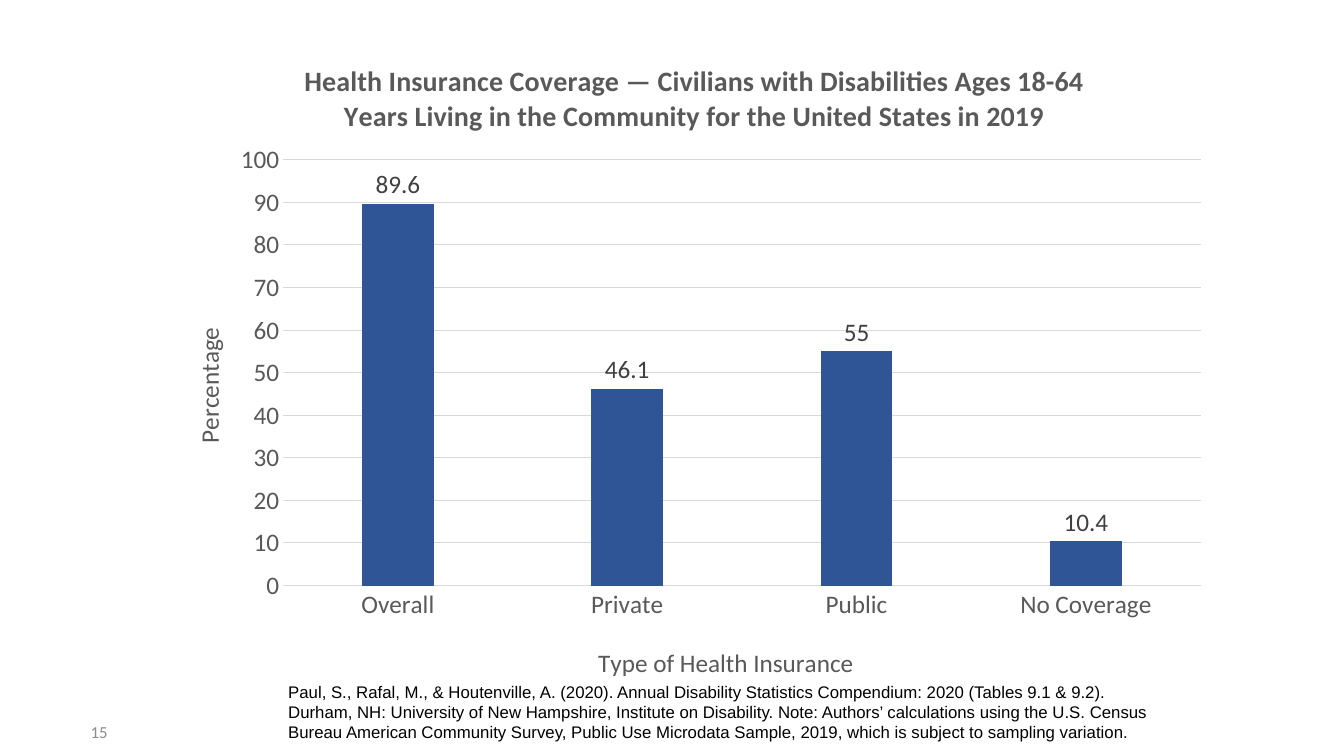
from dataclasses import dataclass
from lxml import etree
from pptx import Presentation
from pptx.chart.data import CategoryChartData
from pptx.dml.color import RGBColor
from pptx.enum.chart import XL_CHART_TYPE, XL_LABEL_POSITION, XL_TICK_MARK
from pptx.enum.text import MSO_ANCHOR
from pptx.util import Inches, Pt

COLUMNS = XL_CHART_TYPE.COLUMN_CLUSTERED
OUTSIDE = XL_LABEL_POSITION.OUTSIDE_END
NO_TICK = XL_TICK_MARK.NONE
TOP, MIDDLE = MSO_ANCHOR.TOP, MSO_ANCHOR.MIDDLE

# Content
TITLE = ("Health Insurance Coverage — Civilians with Disabilities Ages 18-64 "
         "Years Living in the Community for the United States in 2019")
COVERAGE = {"Overall": 89.6, "Private": 46.1, "Public": 55, "No Coverage": 10.4}
X_TITLE = "Type of Health Insurance"
Y_TITLE = "Percentage"
SOURCE = ("Paul, S., Rafal, M., & Houtenville, A. (2020). Annual Disability Statistics "
          "Compendium: 2020 (Tables 9.1 & 9.2). Durham, NH: University of New Hampshire, "
          "Institute on Disability. Note: Authors’ calculations using the U.S. Census "
          "Bureau American Community Survey, Public Use Microdata Sample, 2019, which is "
          "subject to sampling variation.")
PAGE = "15"


@dataclass(frozen=True)
class Theme:
    bar: str = "2F5597"
    grid: str = "D9D9D9"
    text: str = "595959"
    label: str = "404040"
    page: str = "8C8C8C"
    note: str = "000000"
    head: int = 20
    axis: int = 18
    small: int = 12
    font: str = "Calibri"
    serif: str = "Arial"


THEME = Theme()

# Places: slide shares for boxes, chart shares for chart parts
WIDE, HIGH = 13.33, 7.5
CHART_BOX = (0.116, 0.036, 0.794, 0.877)
NOTE_BOX = (0.207, 0.895, 0.661, 0.095)
PAGE_BOX = (0.06, 0.933, 0.056, 0.069)
PLOT = {"x": 0.119, "y": 0.2, "w": 0.86, "h": 0.642}
HEAD_AT = {"x": 0.134, "y": 0.043}
X_AT = {"x": 0.41, "y": 0.925}
Y_AT = {"x": 0.029, "y": 0.446}
C = "http://schemas.openxmlformats.org/drawingml/2006/chart"


def place(box):
    x, y, w, h = box
    return [Inches(round(n, 2)) for n in (x * WIDE, y * HIGH, w * WIDE, h * HIGH)]


def style(font, size, color, name=THEME.font, bold=False):
    font.size, font.name, font.bold = Pt(size), name, bold
    font.color.rgb = RGBColor.from_string(color)


def write(frame, text, **form):
    para = frame.paragraphs[0]
    run = para.add_run()
    run.text = text
    style(run.font, **form)


def add_text(slide, text, box, anchor, **form):
    frame = slide.shapes.add_textbox(*place(box)).text_frame
    frame.word_wrap, frame.vertical_anchor = True, anchor
    write(frame, text, **form)


def lay_out(part, spots, after, inner=False):
    """Give a chart part a fixed place, in shares of the chart."""
    for old in part.findall(f"{{{C}}}layout"):
        part.remove(old)
    layout = etree.Element(f"{{{C}}}layout")
    manual = etree.SubElement(layout, f"{{{C}}}manualLayout")
    if inner:
        etree.SubElement(manual, f"{{{C}}}layoutTarget", val="inner")
    for key in "xy":
        etree.SubElement(manual, f"{{{C}}}{key}Mode", val="edge")
    for key, share in spots.items():
        etree.SubElement(manual, f"{{{C}}}{key}", val=str(share))
    prior = part.find(f"{{{C}}}{after}") if after else None
    part.insert(0 if prior is None else part.index(prior) + 1, layout)


def add_title(owner, text, spots, size, bold=False):
    owner.has_title = True
    title = owner.chart_title if hasattr(owner, "chart_title") else owner.axis_title
    write(title.text_frame, text, size=size, color=THEME.text, bold=bold)
    lay_out(title._element, spots, "tx")
    return title


def set_line(line, color):
    line.color.rgb = RGBColor.from_string(color)
    line.width = Pt(0.75)


def add_columns(slide):
    data = CategoryChartData()
    data.categories = list(COVERAGE)
    data.add_series("Series 1", list(COVERAGE.values()))
    chart = slide.shapes.add_chart(COLUMNS, *place(CHART_BOX), data).chart
    chart.has_legend = False
    style(chart.font, THEME.axis, THEME.text)

    # Titles and axes
    add_title(chart, TITLE, HEAD_AT, THEME.head, bold=True)
    kinds, values = chart.category_axis, chart.value_axis
    for axis in (kinds, values):
        axis.major_tick_mark = axis.minor_tick_mark = NO_TICK
        style(axis.tick_labels.font, THEME.axis, THEME.text)
    add_title(kinds, X_TITLE, X_AT, THEME.axis)
    side = add_title(values, Y_TITLE, Y_AT, THEME.axis)
    side.text_frame._txBody.bodyPr.set("rot", "-5400000")
    side.text_frame._txBody.bodyPr.set("vert", "horz")
    set_line(kinds.format.line, THEME.grid)
    set_line(values.major_gridlines.format.line, THEME.grid)
    values.format.line.fill.background()
    values.minimum_scale, values.maximum_scale, values.major_unit = 0, 100, 10

    # Bars and their labels
    plot = chart.plots[0]
    plot.gap_width, plot.overlap, plot.vary_by_categories = 219, -27, False
    fill = plot.series[0].format.fill
    fill.solid()
    fill.fore_color.rgb = RGBColor.from_string(THEME.bar)
    labels = plot.series[0].data_labels
    labels.show_value, labels.position = True, OUTSIDE
    style(labels.font, THEME.axis, THEME.label)
    area = chart._chartSpace.chart.plotArea
    lay_out(area, PLOT, None, inner=True)


def main():
    deck = Presentation()
    deck.slide_width, deck.slide_height = Inches(WIDE), Inches(HIGH)
    slide = deck.slides.add_slide(deck.slide_layouts[6])
    add_text(slide, PAGE, PAGE_BOX, MIDDLE, size=THEME.small, color=THEME.page)
    add_text(slide, SOURCE, NOTE_BOX, TOP, size=THEME.small, color=THEME.note,
             name=THEME.serif)
    add_columns(slide)
    deck.save("out.pptx")


if __name__ == "__main__":
    main()
